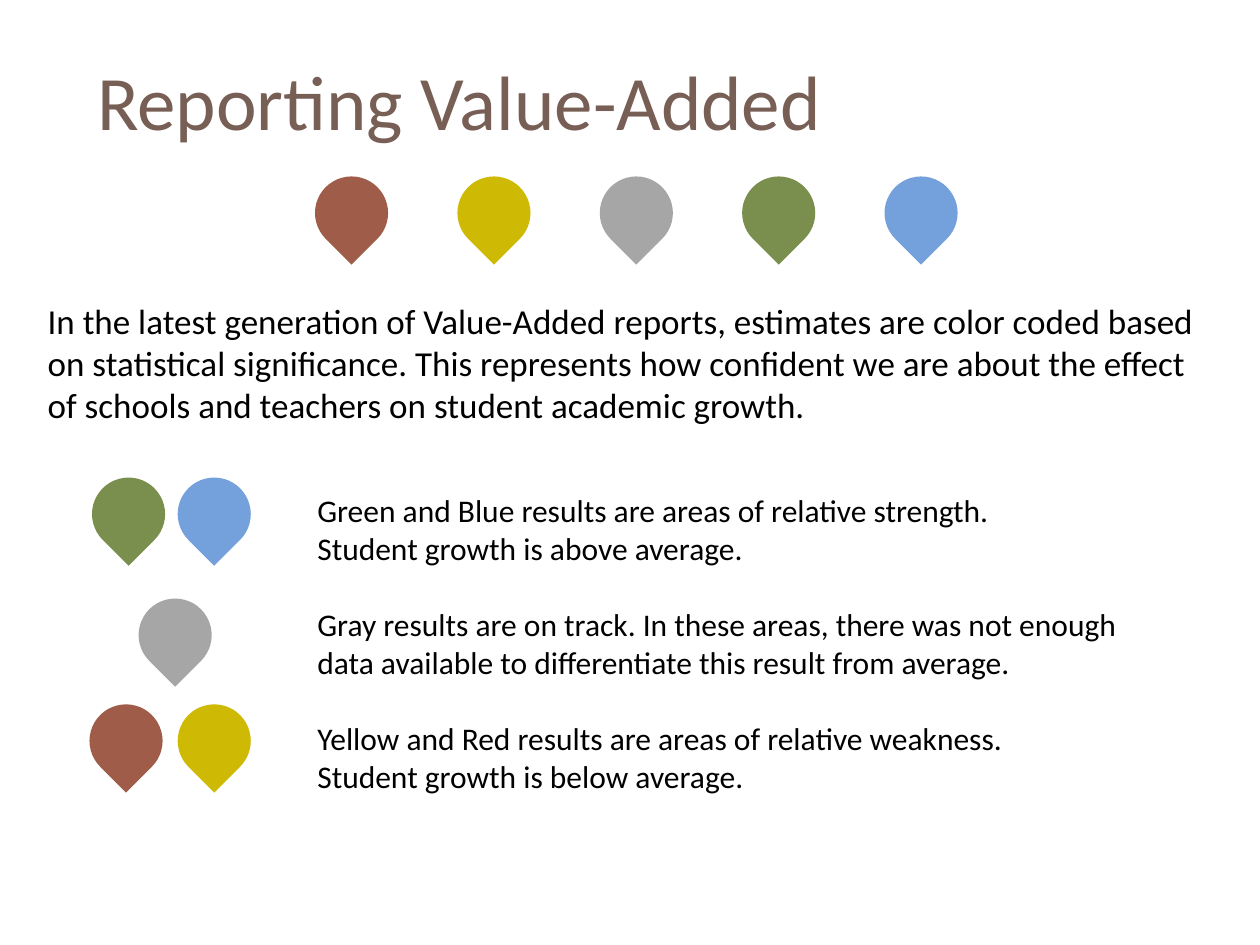
from pptx import Presentation
from pptx.dml.color import RGBColor
from pptx.enum.shapes import MSO_SHAPE
from pptx.enum.text import MSO_ANCHOR, PP_ALIGN
from pptx.util import Emu, Pt

DROP = MSO_SHAPE.TEAR
LEFT = PP_ALIGN.LEFT
MIDDLE = MSO_ANCHOR.MIDDLE
TOP = MSO_ANCHOR.TOP
SCALE = 9144
FONT = "Calibri"
SIZE = 58
RED, YELLOW, GRAY, GREEN, BLUE = "9F5C49", "CEB904", "A6A6A6", "7A8F4D", "74A0DC"
ROW = [RED, YELLOW, GRAY, GREEN, BLUE]
KEYS = [
    (73, 379, GREEN), (141, 379, BLUE),
    (110, 475, GRAY),
    (71, 559, RED), (141, 559, YELLOW),
]
INTRO = (
    "In the latest generation of Value-Added reports, estimates are color coded "
    "based on statistical significance. This represents how confident we are about "
    "the effect of schools and teachers on student academic growth."
)
NOTES = [
    ["Green and Blue results are areas of relative strength.",
     "Student growth is above average."],
    ["Gray results are on track. In these areas, there was not enough data "
     "available to differentiate this result from average."],
    ["Yellow and Red results are areas of relative weakness.",
     "Student growth is below average."],
]


def px(n):
    return Emu(n * SCALE)


def color(code):
    return RGBColor.from_string(code)


def style(para, size, code):
    para.alignment = LEFT
    para.font.name = FONT
    para.font.size = Pt(size)
    para.font.color.rgb = color(code)


def add_title(slide, text):
    title = slide.shapes.title
    title.left, title.top, title.width, title.height = map(px, (67, 25, 892, 108))
    title.text_frame.vertical_anchor = MIDDLE
    title.text_frame.text = text
    style(title.text_frame.paragraphs[0], 44, "775F55")


def add_text(slide, area, groups, size):
    frame = slide.shapes.add_textbox(*map(px, area)).text_frame
    frame.word_wrap = True
    frame.vertical_anchor = TOP
    para = frame.paragraphs[0]
    for g, lines in enumerate(groups):
        for i, line in enumerate(lines):
            if g or i:
                para = frame.add_paragraph()
            para.text = line
            style(para, size, "000000")
            if g and not i:
                para.space_before = Pt(22)


def add_drop(slide, x, y, code):
    drop = slide.shapes.add_shape(DROP, px(x), px(y), px(SIZE), px(SIZE))
    drop.rotation = 135
    drop.shadow.inherit = False
    drop.fill.solid()
    drop.fill.fore_color.rgb = color(code)
    drop.line.fill.background()


def main():
    deck = Presentation()
    deck.slide_width, deck.slide_height = px(1000), px(750)
    slide = deck.slides.add_slide(deck.slide_layouts[5])
    add_title(slide, "Reporting Value-Added")
    add_text(slide, (28, 233, 932, 111), [[INTRO]], 20)
    for i, code in enumerate(ROW):
        add_drop(slide, 250 + i * 113, 140, code)
    for x, y, code in KEYS:
        add_drop(slide, x, y, code)
    add_text(slide, (242, 385, 692, 283), NOTES, 18)
    deck.save("out.pptx")


if __name__ == "__main__":
    main()
